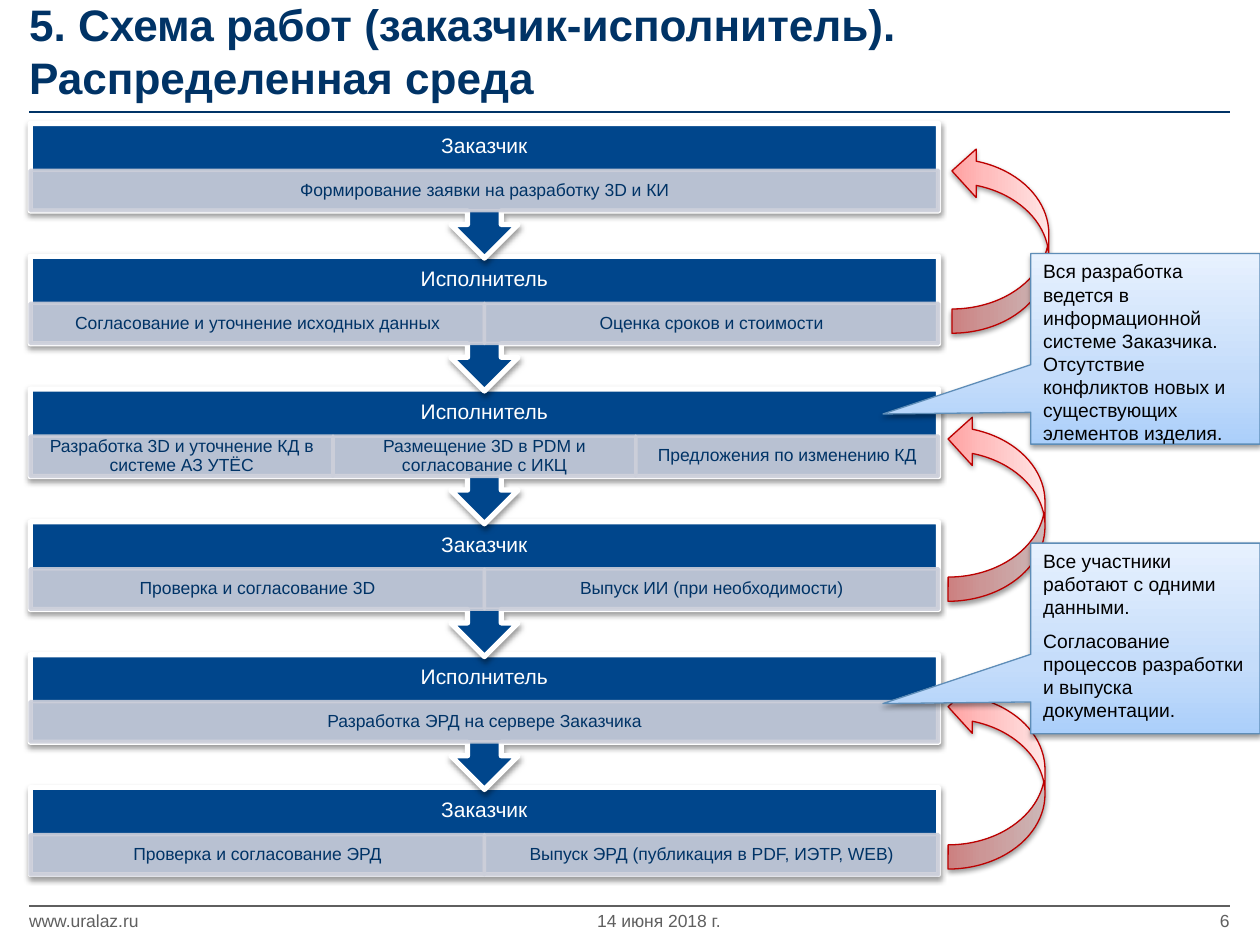
from dataclasses import dataclass

from lxml.etree import SubElement
from pptx import Presentation
from pptx.dml.color import RGBColor
from pptx.enum.shapes import MSO_CONNECTOR, MSO_SHAPE as Preset
from pptx.enum.text import MSO_ANCHOR as Anchor, MSO_AUTO_SIZE, PP_ALIGN as Align
from pptx.oxml.ns import qn
from pptx.util import Pt


@dataclass(frozen=True)
class Theme:
    font: str = "Arial"
    navy: str = "003366"
    blue: str = "00468C"
    white: str = "FFFFFF"
    black: str = "000000"
    grey: str = "5F5F5F"
    cell: str = "CCCFDA"
    red_line: str = "BC0000"
    note_line: str = "5E8DB7"
    red_stops: tuple = ((0, "FFA0A0"), (35, "FFBCBC"), (100, "FFE5E5"))
    note_stops: tuple = ((0, "ABCFFA"), (35, "C4DCFA"), (100, "E7F1FE"))
    title_size: float = 25.2
    head_size: float = 12
    note_size: float = 11
    small_size: float = 10


THEME = Theme()

TITLE = "5. Схема работ (заказчик-исполнитель). \vРаспределенная среда"
STEPS = [
    ("Заказчик", ["Формирование заявки на разработку 3D и КИ"]),
    ("Исполнитель", ["Согласование и уточнение исходных данных", "Оценка сроков и стоимости"]),
    ("Исполнитель", ["Разработка 3D и уточнение КД в системе АЗ УТЁС",
                     "Размещение 3D в PDM и согласование с ИКЦ",
                     "Предложения по изменению КД"]),
    ("Заказчик", ["Проверка и согласование 3D", "Выпуск ИИ (при необходимости)"]),
    ("Исполнитель", ["Разработка ЭРД на сервере Заказчика"]),
    ("Заказчик", ["Проверка и согласование ЭРД", "Выпуск ЭРД (публикация в PDF, ИЭТР, WEB)"]),
]
NOTES = [
    (144.9, ["Вся разработка ведется в информационной системе Заказчика. "
             "Отсутствие конфликтов новых и существующих элементов изделия."]),
    (310.4, ["Все участники работают с одними данными.",
             "Согласование процессов разработки и выпуска документации."]),
]
RETURNS = [(518.4, 109.4), (516.2, 262.6), (516.2, 415.6)]
FOOTER = [
    ("www.uralaz.ru", 16.6, 109.4, Align.LEFT),
    ("14 июня 2018 г.", 324.7, 103.7, Align.CENTER),
    ("6", 661.7, 41, Align.RIGHT),
]
RULES = [(64, THEME.navy, 1.5), (517.7, THEME.grey, 1)]

RULE_LEFT, RULE_RIGHT = 16.6, 702.7
STEP_LEFT, STEP_TOP, STEP_WIDTH, STEP_PITCH = 17.3, 70.5, 519, 75.9
STEP_HEIGHT, LAST_HEIGHT = 77, 49.7
HEAD_HEIGHT, CELL_TOP, CELL_HEIGHT = 26.7, 26.9, 23


def rgb(colour):
    return RGBColor.from_string(colour)


def box(*lengths):
    return [Pt(length) for length in lengths]


def write(frame, *, text, size, colour, bold=False, align=Align.LEFT, anchor=Anchor.TOP,
          insets=(7.2, 3.6), spacing=None, gap=0):
    frame.word_wrap = True
    frame.auto_size = MSO_AUTO_SIZE.NONE
    frame.vertical_anchor = anchor
    frame.margin_left = frame.margin_right = Pt(insets[0])
    frame.margin_top = frame.margin_bottom = Pt(insets[1])
    for index, content in enumerate(text):
        paragraph = frame.paragraphs[0] if index == 0 else frame.add_paragraph()
        paragraph.text = content
        paragraph.alignment = align
        if spacing:
            paragraph.line_spacing = spacing
        if index:
            paragraph.space_before = Pt(gap)
        for run in paragraph.runs:
            run.font.name = THEME.font
            run.font.size = Pt(size)
            run.font.bold = bold
            run.font.color.rgb = rgb(colour)
        for line_break in paragraph._p.findall(qn("a:br")):
            SubElement(line_break, qn("a:rPr"), sz=str(round(size * 100)))


def add_label(slide, bounds, **style):
    write(slide.shapes.add_textbox(*box(*bounds)).text_frame, **style)


def add_shape(slide, preset, bounds, line, weight, fill=None, stops=None, shadow=True):
    shape = slide.shapes.add_shape(preset, *box(*bounds))
    if stops:
        shape.fill.gradient()
        shape.fill.gradient_angle = 90
        stop_list = shape._element.spPr.find(".//" + qn("a:gsLst"))
        stop_list.clear()
        for position, colour in stops:
            stop = SubElement(stop_list, qn("a:gs"), pos=str(position * 1000))
            SubElement(stop, qn("a:srgbClr"), val=colour)
    else:
        shape.fill.solid()
        shape.fill.fore_color.rgb = rgb(fill)
    shape.line.color.rgb = rgb(line)
    shape.line.width = Pt(weight)
    shape.shadow.inherit = False
    if shadow:
        effects = shape._element.spPr.find(qn("a:effectLst"))
        outer = SubElement(effects, qn("a:outerShdw"), blurRad=str(Pt(3.1)), dist=str(Pt(1.6)),
                           dir="5400000", rotWithShape="0")
        tint = SubElement(outer, qn("a:srgbClr"), val=THEME.black)
        SubElement(tint, qn("a:alpha"), val="38000")
    return shape


def add_rule(slide, y, colour, weight):
    rule = slide.shapes.add_connector(MSO_CONNECTOR.STRAIGHT, *box(RULE_LEFT, y, RULE_RIGHT, y))
    rule.line.color.rgb = rgb(colour)
    rule.line.width = Pt(weight)
    SubElement(rule._element.spPr, qn("a:effectLst"))


def add_step(slide, index, role, tasks):
    top = STEP_TOP + index * STEP_PITCH
    is_last = index == len(STEPS) - 1
    preset = Preset.RECTANGLE if is_last else Preset.UP_ARROW_CALLOUT
    height = LAST_HEIGHT if is_last else STEP_HEIGHT
    body = add_shape(slide, preset, (STEP_LEFT, top, STEP_WIDTH, height),
                     THEME.white, 3, fill=THEME.blue)
    body.rotation = 0 if is_last else 180
    add_label(slide, (STEP_LEFT, top, STEP_WIDTH, HEAD_HEIGHT), text=[role],
              size=THEME.head_size, colour=THEME.white, align=Align.CENTER,
              anchor=Anchor.MIDDLE, insets=(6.5, 6.5), spacing=0.9)
    width = STEP_WIDTH / len(tasks)
    for column, task in enumerate(tasks):
        bounds = (STEP_LEFT + column * width, top + CELL_TOP, width, CELL_HEIGHT)
        cell = add_shape(slide, Preset.RECTANGLE, bounds, THEME.cell, 2,
                         fill=THEME.cell, shadow=False)
        for colour in cell._element.spPr.iter(qn("a:srgbClr")):
            SubElement(colour, qn("a:alpha"), val="90000")
        write(cell.text_frame, text=[task], size=THEME.small_size, colour=THEME.navy,
              align=Align.CENTER, anchor=Anchor.MIDDLE, insets=(5.8, 0.7), spacing=0.9)


def main():
    deck = Presentation()
    deck.slide_width, deck.slide_height = box(720, 540)
    slide = deck.slides.add_slide(deck.slide_layouts[5])

    for rule in RULES:
        add_rule(slide, *rule)

    for index, (role, tasks) in reversed(list(enumerate(STEPS))):
        add_step(slide, index, role, tasks)

    title = slide.shapes.title
    title.left, title.top, title.width, title.height = box(16.6, 21.6, 554.4, 41)
    write(title.text_frame, text=[TITLE], size=THEME.title_size, colour=THEME.navy,
          bold=True, anchor=Anchor.BOTTOM, insets=(0, 3.6))

    for caption, left, width, align in FOOTER:
        add_label(slide, (left, 517.5, width, 17.3), text=[caption], size=THEME.small_size,
                  colour=THEME.grey, align=align, anchor=Anchor.MIDDLE, insets=(0, 3.6))

    for left, top in RETURNS:
        arrow = add_shape(slide, Preset.CURVED_DOWN_ARROW, (left, top, 106.6, 55.4),
                          THEME.red_line, 0.75, stops=THEME.red_stops)
        arrow.rotation = 90
        arrow._element.spPr.find(qn("a:xfrm")).set("flipH", "1")

    for top, remarks in NOTES:
        note = add_shape(slide, Preset.RECTANGULAR_CALLOUT, (589, top, 131, 108.9),
                         THEME.note_line, 0.75, stops=THEME.note_stops)
        note.adjustments[0], note.adjustments[1] = -1.145, 0.342
        write(note.text_frame, text=remarks, size=THEME.note_size, colour=THEME.black, gap=6)

    deck.save("out.pptx")


if __name__ == "__main__":
    main()
